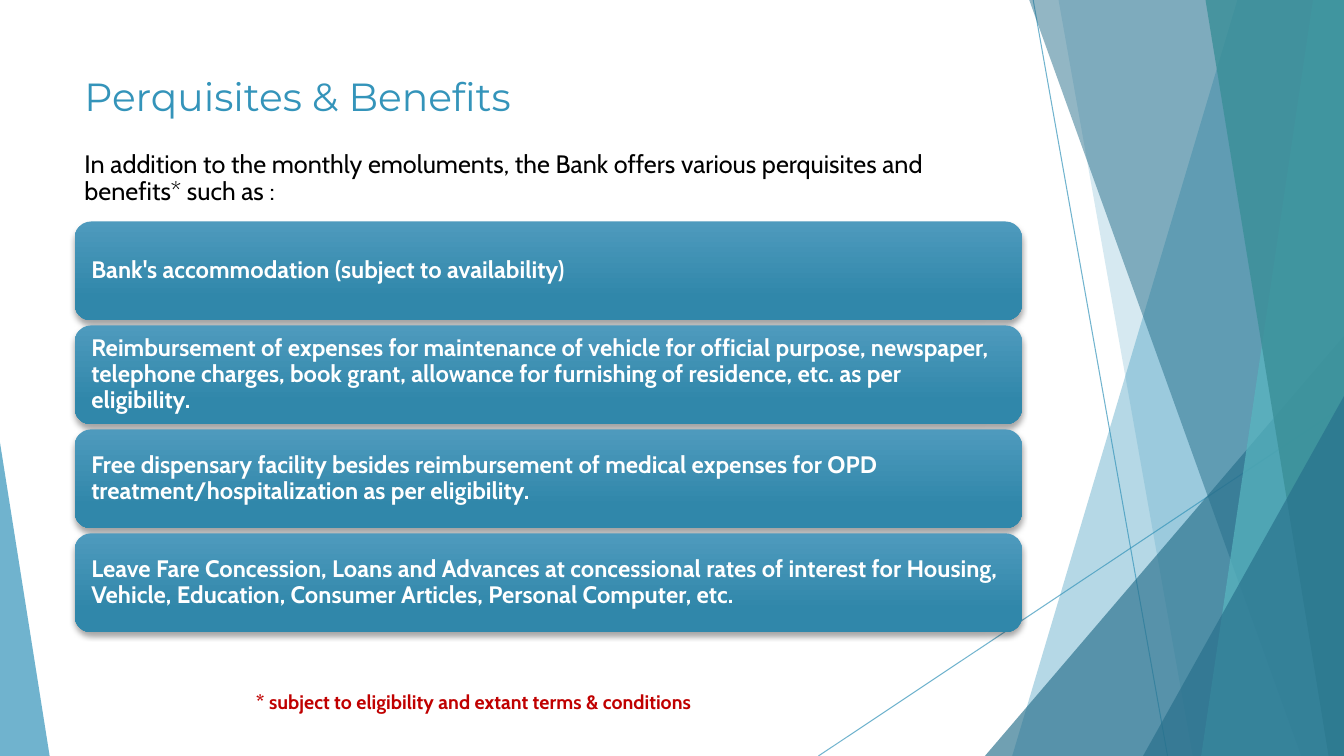
import pptx
import pptx.util
from lxml import etree
from pptx.dml.color import RGBColor
from pptx.enum.shapes import MSO_CONNECTOR, MSO_SHAPE
from pptx.enum.text import MSO_ANCHOR, PP_ALIGN
from pptx.oxml.ns import qn

Pt = pptx.util.Pt

# Colours
BLUE = RGBColor(0x34, 0x94, 0xBA)
DEEP_BLUE = RGBColor(0x27, 0x6F, 0x8B)
TURQUOISE = RGBColor(0x58, 0xB6, 0xC0)
TEAL = RGBColor(0x3A, 0x8F, 0x98)
CARD_TOP = RGBColor(0x4E, 0x9A, 0xBD)
CARD_BOTTOM = RGBColor(0x30, 0x87, 0xAA)
BLACK = RGBColor(0, 0, 0)
WHITE = RGBColor(0xFF, 0xFF, 0xFF)
RED = RGBColor(0xC0, 0, 0)

# Content
TITLE = "Perquisites & Benefits"
INTRO = ("In addition to the monthly emoluments, the Bank offers various "
         "perquisites and benefits* such as :")
BENEFITS = [
    "Bank's accommodation (subject to availability)",
    "Reimbursement of expenses for maintenance of vehicle for official purpose, newspaper, "
    "telephone charges, book grant, allowance for furnishing of residence, etc. as per eligibility.",
    "Free dispensary facility besides reimbursement of medical expenses for OPD "
    "treatment/hospitalization as per eligibility.",
    "Leave Fare Concession, Loans and Advances at concessional rates of interest for Housing, "
    "Vehicle, Education, Consumer Articles, Personal Computer, etc.",
]
FOOTNOTE = "* subject to eligibility and extant terms & conditions"

# Layout, in points
WIDTH, HEIGHT = 960, 540
LEFT, CONTENT_WIDTH = 53.3, 676.8
CARD_START, CARD_HEIGHT, CARD_PITCH = 158.2, 70.6, 74.25

# Thin lines: from x, from y, to x, to y
RAYS = [(738, 0, 834, 540), (960, 290, 584.6, 540)]

# Decorative facets, back to front. A band runs from its top x and bottom x to
# the right edge; a triangle has left, top, width and apex position.
FACETS = [
    ("band", (884, 723), BLUE, 36),
    ("band", (756, 852), BLUE, 20),
    ("triangle", (703.5, 240, 256.5, 1), DEEP_BLUE, 66),
    ("band", (735, 929.5), DEEP_BLUE, 50),
    ("band", (938, 858), TURQUOISE, 70),
    ("band", (861, 949), TEAL, 80),
    ("triangle", (816.5, 283, 143.5, 1), DEEP_BLUE, 66),
    ("triangle", (0, 316, 35.5, 0), BLUE, 70),
]


def set_opacity(shape, percent):
    color = shape._element.spPr.find(".//" + qn("a:srgbClr"))
    etree.SubElement(color, qn("a:alpha"), val=str(percent * 1000))


def write_text(shape, text, *, size, color, font="Cabin", bold=False,
               align=PP_ALIGN.LEFT, anchor=MSO_ANCHOR.TOP, spacing=0.9, insets=(7.2, 3.6)):
    frame = shape.text_frame
    frame.word_wrap = True
    frame.vertical_anchor = anchor
    frame.margin_left = frame.margin_right = Pt(insets[0])
    frame.margin_top = frame.margin_bottom = Pt(insets[1])
    paragraph = frame.paragraphs[0]
    paragraph.alignment = align
    paragraph.line_spacing = spacing
    run = paragraph.add_run()
    run.text = text
    run.font.name = font
    run.font.size = Pt(size)
    run.font.bold = bold
    run.font.color.rgb = color


def add_text_box(left, top, width, height):
    return slide.shapes.add_textbox(Pt(left), Pt(top), Pt(width), Pt(height))


def add_ray(from_x, from_y, to_x, to_y):
    ray = slide.shapes.add_connector(
        MSO_CONNECTOR.STRAIGHT, Pt(from_x), Pt(from_y), Pt(to_x), Pt(to_y))
    ray.line.color.rgb = BLUE
    ray.line.width = Pt(0.75)
    set_opacity(ray, 70)
    etree.SubElement(ray._element.spPr, qn("a:effectLst"))


def add_facet(kind, geometry, color, opacity):
    if kind == "band":
        top_x, bottom_x = geometry
        builder = slide.shapes.build_freeform(Pt(top_x), Pt(-0.6))
        corners = [(WIDTH, -0.6), (WIDTH, HEIGHT), (bottom_x, HEIGHT)]
        builder.add_line_segments([(Pt(x), Pt(y)) for x, y in corners], close=True)
        facet = builder.convert_to_shape()
    else:
        left, top, width, apex = geometry
        facet = slide.shapes.add_shape(
            MSO_SHAPE.ISOSCELES_TRIANGLE, Pt(left), Pt(top), Pt(width), Pt(HEIGHT - top))
        facet.adjustments[0] = apex
    facet.fill.solid()
    facet.fill.fore_color.rgb = color
    set_opacity(facet, opacity)
    facet.line.fill.background()
    facet.shadow.inherit = False


def add_card(top, text):
    card = slide.shapes.add_shape(
        MSO_SHAPE.ROUNDED_RECTANGLE, Pt(LEFT), Pt(top), Pt(CONTENT_WIDTH), Pt(CARD_HEIGHT))
    card.fill.gradient()
    card.fill.gradient_angle = 270
    for stop, color, position in zip(
            card.fill.gradient_stops, (CARD_TOP, CARD_BOTTOM), (0, 0.78)):
        stop.color.rgb = color
        stop.position = position
    card.line.fill.background()

    # Soft shadow straight below the card
    card.shadow.inherit = False
    effects = card._element.spPr.find(qn("a:effectLst"))
    shadow = etree.SubElement(effects, qn("a:outerShdw"), blurRad=str(Pt(4)),
                              dist=str(Pt(3)), dir="5400000", rotWithShape="0")
    color = etree.SubElement(shadow, qn("a:srgbClr"), val=str(BLACK))
    etree.SubElement(color, qn("a:alpha"), val="35000")

    write_text(card, text, size=17, color=WHITE, bold=True,
               anchor=MSO_ANCHOR.MIDDLE, insets=(8.5, 8.5))


presentation = pptx.Presentation()
presentation.slide_width, presentation.slide_height = Pt(WIDTH), Pt(HEIGHT)
slide = presentation.slides.add_slide(presentation.slide_layouts[6])

# Background decoration
for ray_ends in RAYS:
    add_ray(*ray_ends)
for facet_row in FACETS:
    add_facet(*facet_row)

# Title
write_text(add_text_box(LEFT, 48, CONTENT_WIDTH, 104), TITLE,
           size=28, color=BLUE, font="Montserrat", spacing=1.0)

# Benefit cards
for index, benefit in enumerate(BENEFITS):
    add_card(CARD_START + index * CARD_PITCH, benefit)

# Introduction and footnote
write_text(add_text_box(LEFT, 105, CONTENT_WIDTH, 47), INTRO, size=18, color=BLACK)
write_text(add_text_box(0, 491.5, CONTENT_WIDTH, 22.5), FOOTNOTE,
           size=14, color=RED, bold=True, align=PP_ALIGN.CENTER)

presentation.save("out.pptx")
